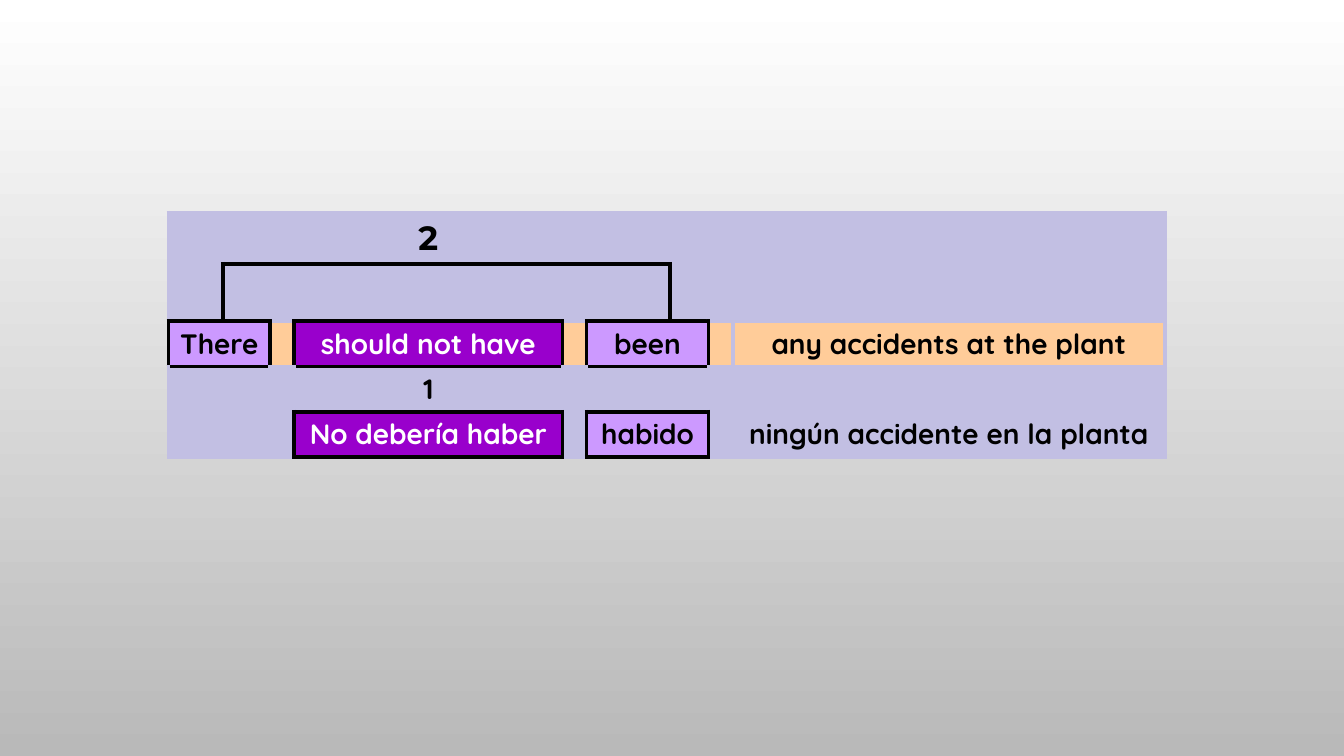
from lxml.etree import SubElement
from pptx import Presentation
from pptx.dml.color import RGBColor
from pptx.enum.text import MSO_ANCHOR, PP_ALIGN
from pptx.oxml.ns import qn
from pptx.util import Inches, Pt

COLORS = {"back": "C2BFE3", "line": "000000", "text": "000000", "light": "FFFFFF",
          "verb": "9900CC", "part": "CC99FF", "band": "FFCC99",
          "top": "FFFFFF", "foot": "B9B9B9"}

# Content: (row, column) -> text, fill, format
WORDS = {
    (0, 3): ("2", "back", {"size": 24, "face": "Montserrat"}),
    (2, 0): ("There", "part", {}),
    (2, 3): ("should not have", "verb", {"color": "light"}),
    (2, 5): ("been", "part", {}),
    (2, 8): ("any accidents at the plant", "band", {}),
    (3, 3): ("1", "back", {}),
    (4, 3): ("No debería haber", "verb", {"color": "light"}),
    (4, 5): ("habido", "part", {}),
    (4, 8): ("ningún accidente en la planta", "back", {}),
}
WIDTHS = [0.54, 0.47, 0.23, 2.66, 0.23, 0.83, 0.38, 0.23, 4.29]
HEIGHTS = [0.5, 0.57, 0.41, 0.41, 0.4]
PAIRS = (0, 5)       # columns joined with the next one
SPLIT = 1            # row whose columns stay apart
BAND = 2             # row of the English sentence
BOXES = [(2, 0), (2, 3), (2, 5), (4, 3), (4, 5)]


def span(row, col):
    return 2 if col in PAIRS and row != SPLIT else 1


def write(cell, text, size=20, face="Quicksand", color="text"):
    para = cell.text_frame.paragraphs[0]
    para.alignment = PP_ALIGN.CENTER
    run = para.add_run()
    run.text = text
    font = run.font
    font.size, font.name, font.bold = Pt(size), face, True
    font.color.rgb = RGBColor.from_string(COLORS[color])


def border(cell, sides):
    props = cell._tc.get_or_add_tcPr()
    for side, dark in sides.items():
        line = SubElement(props, qn("a:ln" + side), w=str(Pt(3)))
        fill = SubElement(line, qn("a:solidFill"))
        SubElement(fill, qn("a:srgbClr"), val=COLORS["line" if dark else "back"])


def find_edges():
    # The bracket, then the outline of each box
    flat = {(1, col) for col in range(1, 6)}
    tall = {(1, 1), (1, 6)}
    for row, col in BOXES:
        end = col + span(row, col)
        flat |= {(edge, at) for edge in (row, row + 1) for at in range(col, end)}
        tall |= {(row, col), (row, end)}
    return flat, tall


def main():
    deck = Presentation()
    deck.slide_width, deck.slide_height = Inches(13.33), Inches(7.5)
    slide = deck.slides.add_slide(deck.slide_layouts[6])

    # Background
    fill = slide.background.fill
    fill.gradient()
    fill.gradient_angle = 270
    for stop, name in zip(fill.gradient_stops, ("top", "foot")):
        stop.color.rgb = RGBColor.from_string(COLORS[name])

    # Table grid
    frame = slide.shapes.add_table(len(HEIGHTS), len(WIDTHS), Inches(1.67), Inches(2.11),
                                   Inches(sum(WIDTHS)), Inches(sum(HEIGHTS)))
    table = frame.table
    table.first_row = table.horz_banding = False
    for col, width in zip(table.columns, WIDTHS):
        col.width = Inches(width)
    for row, height in zip(table.rows, HEIGHTS):
        row.height = Inches(height)

    # Cells
    flat, tall = find_edges()
    for row in range(len(HEIGHTS)):
        for col in range(len(WIDTHS)):
            cell = table.cell(row, col)
            if cell.is_spanned:
                continue
            wide = span(row, col)
            sides = {"L": (row, col) in tall, "R": (row, col + wide) in tall,
                     "T": (row, col) in flat, "B": (row + 1, col) in flat}
            if wide == 2:
                cell.merge(table.cell(row, col + 1))
            plain = "band" if row == BAND else "back"
            text, shade, style = WORDS.get((row, col), ("", plain, {}))
            for at in range(col, col + wide):
                part = table.cell(row, at)
                border(part, sides)
                part.fill.solid()
                part.fill.fore_color.rgb = RGBColor.from_string(COLORS[shade])
            cell.vertical_anchor = MSO_ANCHOR.MIDDLE
            if col == len(WIDTHS) - 1:
                cell.margin_left = cell.margin_right = Inches(0.04)
            if text:
                write(cell, text, **style)

    deck.save("out.pptx")


if __name__ == "__main__":
    main()
